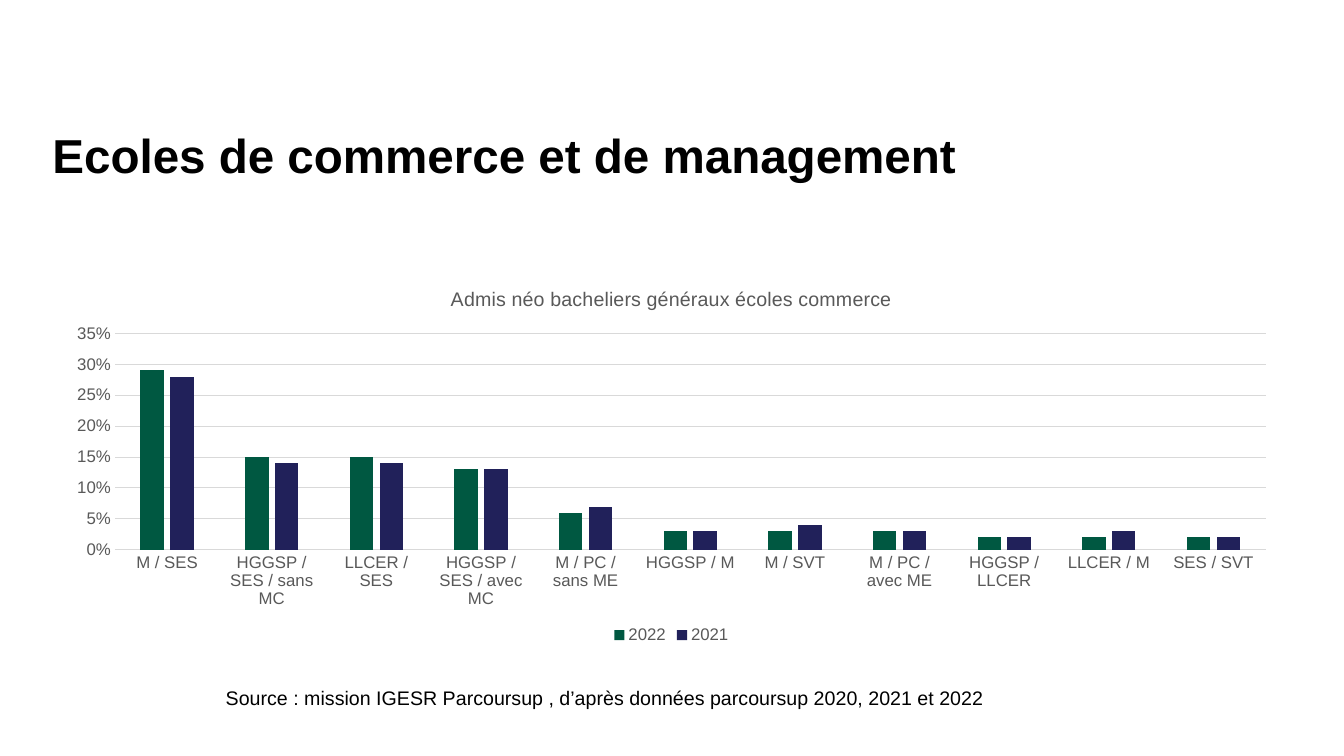
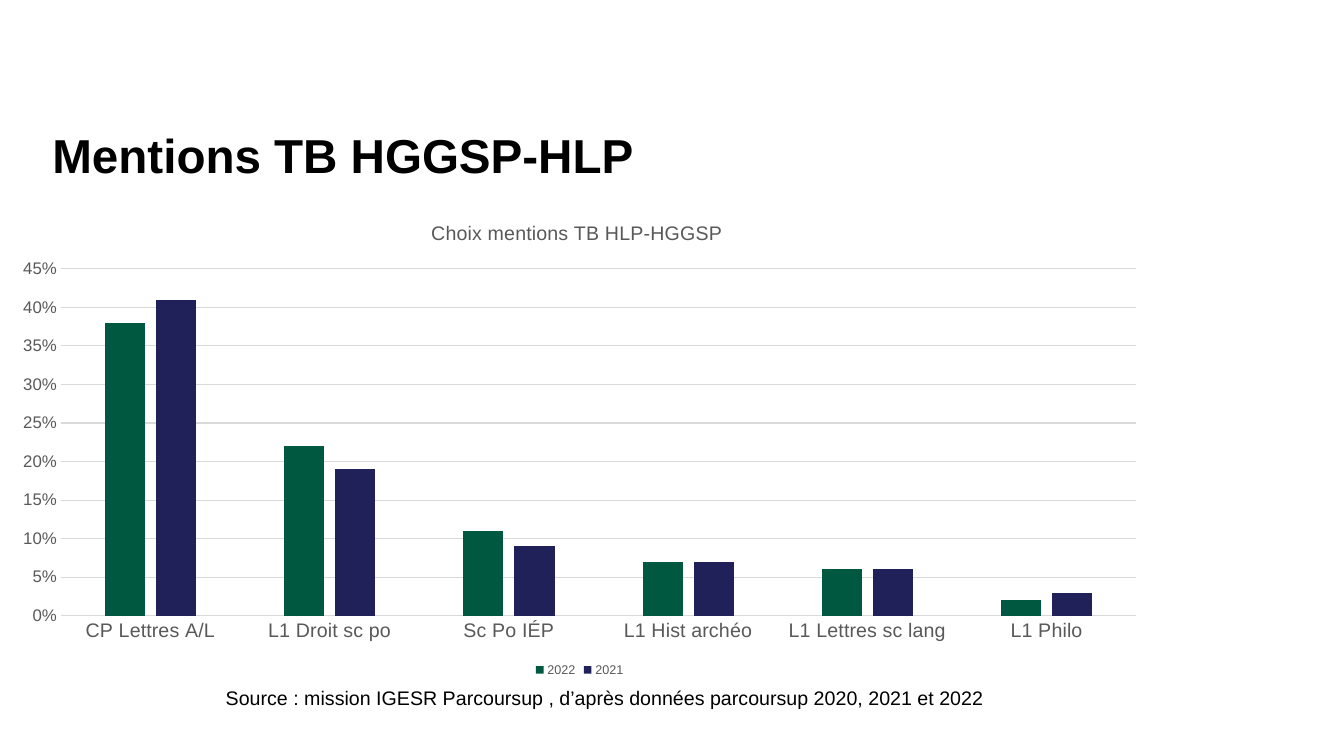
import pptx
import pptx.chart.data
import pptx.dml.color
import pptx.enum.chart
import pptx.enum.text
import pptx.util

Inches = pptx.util.Inches
Pt = pptx.util.Pt
RGBColor = pptx.dml.color.RGBColor

FONT = "Arial"
BLACK = RGBColor(0x00, 0x00, 0x00)
WHITE = RGBColor(0xFF, 0xFF, 0xFF)
GREY = RGBColor(0x59, 0x59, 0x59)
GRID = RGBColor(0xD9, 0xD9, 0xD9)
GREEN = RGBColor(0x00, 0x58, 0x41)
NAVY = RGBColor(0x21, 0x21, 0x5A)

TITLE_BOX = (0.52, 1.31, 12.28, 1.05)
SOURCE_BOX = (2.14, 6.76, 7.82, 0.34)
SOURCE = ("Source : mission IGESR Parcoursup , d’après données parcoursup "
          "2020, 2021 et 2022")

SLIDES = [
    {
        "title": "Ecoles de commerce et de management",
        "box": (0.52, 2.68, 12.28, 3.75),
        "chart_title": "Admis néo bacheliers généraux écoles commerce",
        "categories": [
            "M / SES", "HGGSP / SES / sans MC", "LLCER / SES",
            "HGGSP / SES / avec MC", "M / PC / sans ME", "HGGSP / M",
            "M / SVT", "M / PC / avec ME", "HGGSP / LLCER", "LLCER / M",
            "SES / SVT"],
        "series": {
            "2022": [0.29, 0.15, 0.15, 0.13, 0.06, 0.03, 0.03, 0.03,
                     0.02, 0.02, 0.02],
            "2021": [0.28, 0.14, 0.14, 0.13, 0.07, 0.03, 0.04, 0.03,
                     0.02, 0.03, 0.02]},
        "maximum": 0.35, "category_size": 12, "legend_size": 12,
    },
    {
        "title": "Mentions TB HGGSP-HLP",
        "box": (0, 2, 11.5, 4.76),
        "chart_title": "Choix mentions TB HLP-HGGSP ",
        "categories": [
            "CP Lettres A/L", "L1 Droit sc po", "Sc Po IÉP",
            "L1 Hist archéo", "L1 Lettres sc lang", "L1 Philo"],
        "series": {
            "2022": [0.38, 0.22, 0.11, 0.07, 0.06, 0.02],
            "2021": [0.41, 0.19, 0.09, 0.07, 0.06, 0.03]},
        "maximum": 0.45, "category_size": 14, "legend_size": 9,
    },
]


def format_font(font, size, color, bold=False):
    font.name = FONT
    font.size = Pt(size)
    font.bold = bold
    font.color.rgb = color


def write_text(frame, text, size=14, color=BLACK, bold=False, spacing=None):
    """Put one left-aligned paragraph at the top of a text frame."""
    frame.word_wrap = True
    frame.vertical_anchor = pptx.enum.text.MSO_ANCHOR.TOP
    paragraph = frame.paragraphs[0]
    paragraph.alignment = pptx.enum.text.PP_ALIGN.LEFT
    paragraph.line_spacing = spacing
    run = paragraph.add_run()
    run.text = text
    format_font(run.font, size, color, bold)


def add_title(slide, text, box):
    title = slide.shapes.title
    title.left, title.top, title.width, title.height = map(Inches, box)
    frame = title.text_frame
    frame.auto_size = pptx.enum.text.MSO_AUTO_SIZE.NONE
    frame.margin_left = frame.margin_right = 0
    frame.margin_top = frame.margin_bottom = 0
    write_text(frame, text, size=34, bold=True, spacing=0.9)


def add_source(slide, box):
    frame = slide.shapes.add_textbox(*map(Inches, box)).text_frame
    frame.auto_size = pptx.enum.text.MSO_AUTO_SIZE.SHAPE_TO_FIT_TEXT
    write_text(frame, SOURCE)


def style_axes(chart, maximum, category_size):
    category_axis, value_axis = chart.category_axis, chart.value_axis
    for axis, size in ((category_axis, category_size), (value_axis, 12)):
        axis.major_tick_mark = pptx.enum.chart.XL_TICK_MARK.NONE
        axis.minor_tick_mark = pptx.enum.chart.XL_TICK_MARK.NONE
        format_font(axis.tick_labels.font, size, GREY)
    value_axis.minimum_scale = 0
    value_axis.maximum_scale = maximum
    value_axis.major_unit = 0.05
    value_axis.tick_labels.number_format = "0%"
    value_axis.tick_labels.number_format_is_linked = False
    value_axis.format.line.fill.background()
    value_axis.has_major_gridlines = True
    for line in (category_axis.format.line,
                 value_axis.major_gridlines.format.line):
        line.color.rgb = GRID
        line.width = Pt(0.75)


def add_column_chart(slide, content):
    data = pptx.chart.data.CategoryChartData(number_format="0%")
    data.categories = content["categories"]
    for name, values in content["series"].items():
        data.add_series(name, values)
    chart = slide.shapes.add_chart(
        pptx.enum.chart.XL_CHART_TYPE.COLUMN_CLUSTERED,
        *map(Inches, content["box"]), data).chart
    format_font(chart.font, 10, BLACK)

    # Title and legend
    chart.has_title = True
    chart.chart_title.include_in_layout = False
    title_run = chart.chart_title.text_frame.paragraphs[0].add_run()
    title_run.text = content["chart_title"]
    format_font(title_run.font, 14, GREY)
    chart.has_legend = True
    chart.legend.position = pptx.enum.chart.XL_LEGEND_POSITION.BOTTOM
    chart.legend.include_in_layout = False
    format_font(chart.legend.font, content["legend_size"], GREY)

    # Columns
    plot = chart.plots[0]
    plot.gap_width = 219
    plot.overlap = -27
    plot.vary_by_categories = False
    for series, color in zip(plot.series, (GREEN, NAVY)):
        series.format.fill.solid()
        series.format.fill.fore_color.rgb = color
        series.invert_if_negative = False
    style_axes(chart, content["maximum"], content["category_size"])


def add_chart_slide(presentation, content):
    slide = presentation.slides.add_slide(presentation.slide_layouts[5])
    add_title(slide, content["title"], TITLE_BOX)
    add_column_chart(slide, content)
    add_source(slide, SOURCE_BOX)


def main():
    presentation = pptx.Presentation()
    presentation.slide_width = Inches(13.33)
    presentation.slide_height = Inches(7.5)
    background = presentation.slide_master.background.fill
    background.solid()
    background.fore_color.rgb = WHITE
    for content in SLIDES:
        add_chart_slide(presentation, content)
    presentation.save("out.pptx")


if __name__ == "__main__":
    main()
